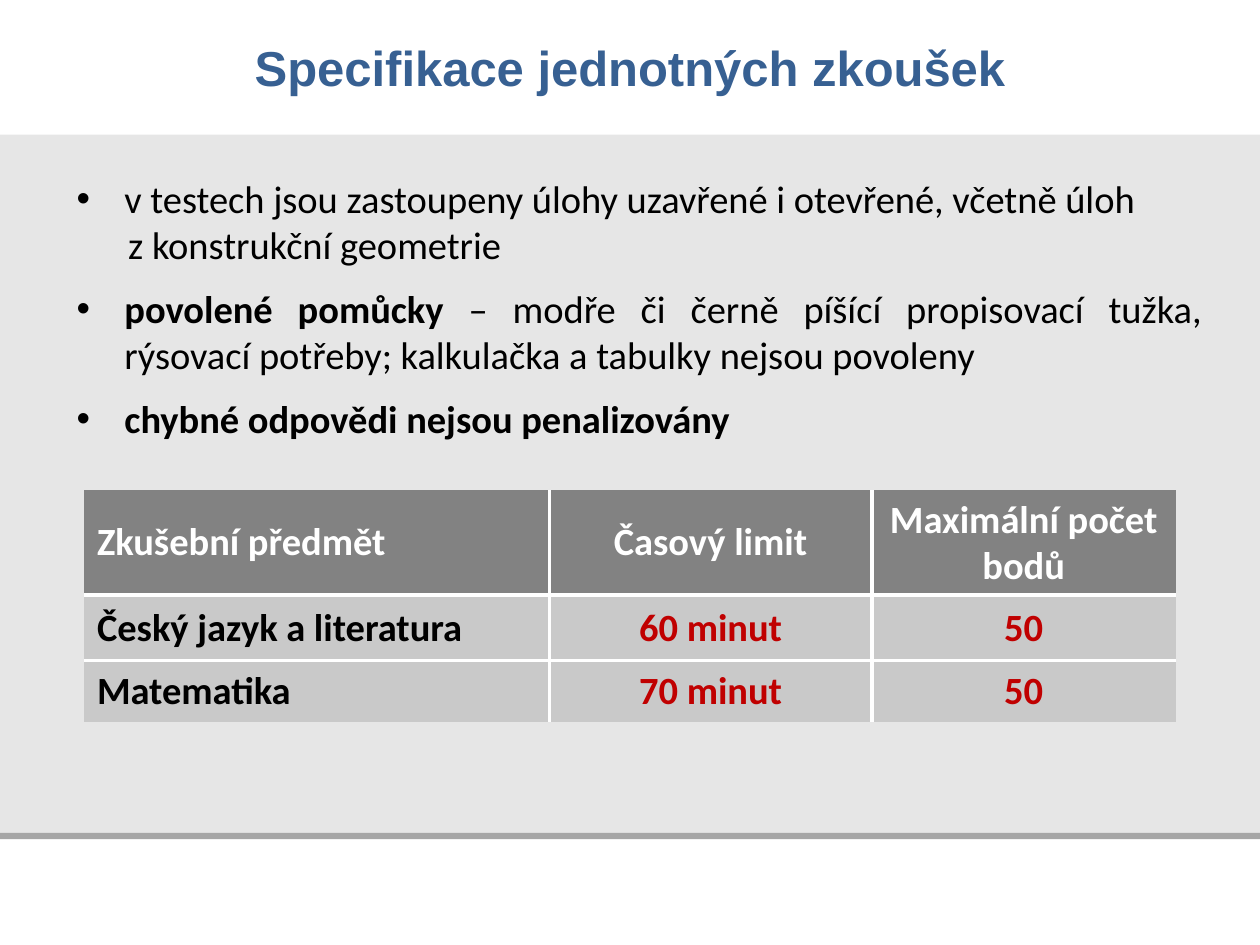
import pptx
import pptx.dml.color
import pptx.enum.shapes
import pptx.enum.text
import pptx.oxml
import pptx.oxml.ns
import pptx.util

RGBColor = pptx.dml.color.RGBColor
ALIGN = pptx.enum.text.PP_ALIGN
MIDDLE = pptx.enum.text.MSO_ANCHOR.MIDDLE

WHITE = RGBColor(0xFF, 0xFF, 0xFF)
BLACK = RGBColor(0, 0, 0)
PAGE = RGBColor(0xE6, 0xE6, 0xE6)
RULE = RGBColor(0xA6, 0xA6, 0xA6)
TITLE = RGBColor(0x37, 0x60, 0x92)
HEAD = RGBColor(0x82, 0x82, 0x82)
BODY = RGBColor(0xC9, 0xC9, 0xC9)
RED = RGBColor(0xC0, 0, 0)

WIDTH, HEIGHT = pptx.util.Inches(10), pptx.util.Inches(7.5)
COL, ROW = WIDTH / 100, HEIGHT / 75
HANG = 3.8

BULLETS = [
    ([("v testech jsou zastoupeny úlohy uzavřené i otevřené, včetně úloh", False)],
     dict(align=ALIGN.JUSTIFY, bullet=True)),
    ([("z konstrukční geometrie", False)],
     dict(align=ALIGN.JUSTIFY, indent=4.1)),
    ([("povolené pomůcky ", True),
      ("– modře či černě píšící propisovací tužka, rýsovací potřeby; "
       "kalkulačka a tabulky nejsou povoleny", False)],
     dict(align=ALIGN.JUSTIFY, bullet=True, before=10)),
    ([("chybné odpovědi nejsou penalizovány", True)],
     dict(bullet=True, before=10, after=6)),
]
TABLE = [
    ("Zkušební předmět", "Časový limit", "Maximální počet bodů"),
    ("Český jazyk a literatura", "60 minut", "50"),
    ("Matematika", "70 minut", "50"),
]
COLUMNS = (36.9, 25.6, 24.1)
ROWS = (8.3, 5.2, 4.9)


def cols(n):
    return pptx.util.Emu(round(n * COL))


def rows(n):
    return pptx.util.Emu(round(n * ROW))


def box(x, y, w, h):
    return cols(x), rows(y), cols(w), rows(h)


def xml(tag, body="", **attrs):
    fields = "".join(f' {k}="{v}"' for k, v in attrs.items())
    ns = pptx.oxml.ns.nsdecls("a")
    return pptx.oxml.parse_xml(f"<a:{tag} {ns}{fields}>{body}</a:{tag}>")


def write(p, runs, size=22, font="Calibri", color=BLACK, align=ALIGN.LEFT,
          bullet=False, indent=0, before=0, after=0):
    pPr = p._p.get_or_add_pPr()
    if bullet:
        pPr.set("marL", str(cols(HANG)))
        pPr.set("indent", str(-cols(HANG)))
        pPr.append(xml("buFont", typeface="Arial"))
        pPr.append(xml("buChar", char="•"))
    elif indent:
        pPr.set("marL", str(cols(indent)))
        pPr.set("indent", "0")
    p.alignment = align
    p.space_before = pptx.util.Pt(before)
    p.space_after = pptx.util.Pt(after)
    for text, bold in runs:
        r = p.add_run()
        r.text = text
        r.font.size = pptx.util.Pt(size)
        r.font.name = font
        r.font.bold = bold
        r.font.color.rgb = color


def add_band(s, y, h, color):
    sp = s.shapes.add_shape(pptx.enum.shapes.MSO_SHAPE.RECTANGLE, *box(0, y, 100, h))
    sp.shadow.inherit = False
    sp.fill.solid()
    sp.fill.fore_color.rgb = color
    sp.line.fill.background()


def add_title(s, text):
    tf = s.shapes.add_textbox(*box(7.5, 0, 85, 10.7)).text_frame
    tf.word_wrap = True
    tf.vertical_anchor = MIDDLE
    tf.margin_left = tf.margin_right = tf.margin_top = tf.margin_bottom = 0
    write(tf.paragraphs[0], [(text, True)], size=28, font="Arial",
          color=TITLE, align=ALIGN.CENTER)


def add_bullets(s, items):
    tf = s.shapes.add_textbox(*box(5.1, 13.4, 91.3, 22.1)).text_frame
    tf.word_wrap = True
    for i, (runs, style) in enumerate(items):
        p = tf.add_paragraph() if i else tf.paragraphs[0]
        write(p, runs, **style)


def set_borders(cell, inner):
    tcPr = cell._tc.get_or_add_tcPr()
    line = f'<a:solidFill><a:srgbClr val="{WHITE}"/></a:solidFill>'
    for side, shown in zip("LRTB", inner):
        tcPr.append(xml(f"ln{side}", line if shown else "<a:noFill/>",
                        w=pptx.util.Pt(2.2)))


def add_table(s, data):
    table = s.shapes.add_table(
        len(ROWS), len(COLUMNS), *box(6.7, 38.9, sum(COLUMNS), sum(ROWS))).table
    for column, w in zip(table.columns, COLUMNS):
        column.width = cols(w)
    for row, h in zip(table.rows, ROWS):
        row.height = rows(h)
    for i, texts in enumerate(data):
        for j, text in enumerate(texts):
            cell = table.cell(i, j)
            set_borders(cell, (j > 0, j < len(COLUMNS) - 1, i > 0, i < len(ROWS) - 1))
            cell.fill.solid()
            cell.fill.fore_color.rgb = BODY if i else HEAD
            cell.vertical_anchor = MIDDLE
            color = WHITE if i == 0 else RED if j else BLACK
            write(cell.text_frame.paragraphs[0], [(text, True)], color=color,
                  align=ALIGN.CENTER if j else ALIGN.LEFT)


def main():
    prs = pptx.Presentation()
    prs.slide_width, prs.slide_height = WIDTH, HEIGHT
    s = prs.slides.add_slide(prs.slide_layouts[6])
    s.background.fill.solid()
    s.background.fill.fore_color.rgb = PAGE
    add_band(s, 66.6, 8.4, WHITE)
    add_band(s, 66.1, 0.5, RULE)
    add_band(s, 0, 10.7, WHITE)
    add_title(s, "Specifikace jednotných zkoušek")
    add_bullets(s, BULLETS)
    add_table(s, TABLE)
    prs.save("out.pptx")


if __name__ == "__main__":
    main()
